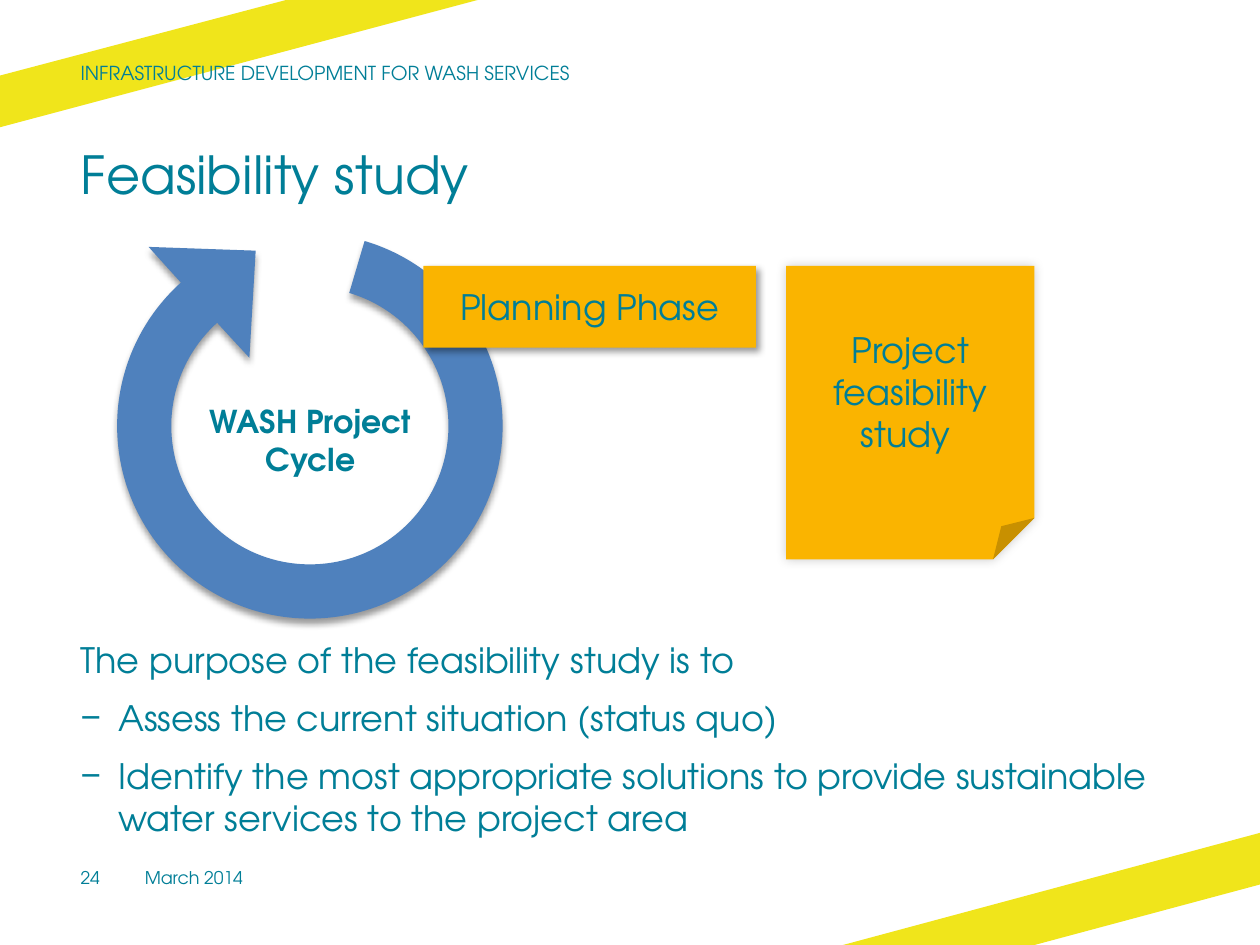
from math import cos, radians, sin, tan

from lxml.etree import SubElement
from pptx import Presentation
from pptx.dml.color import RGBColor
from pptx.enum.shapes import MSO_SHAPE as Shape
from pptx.enum.text import MSO_ANCHOR as Anchor, PP_ALIGN as Align
from pptx.oxml.ns import qn
from pptx.util import Inches, Pt

FONT, DASH_FONT = "TeX Gyre Adventor", "Arial"
TEAL, YELLOW, AMBER, BLUE = "007E97", "F0E51B", "FAB400", "4F81BD"
WIDTH, HEIGHT = 10, 7.5
MARGIN, CONTENT_WIDTH = 0.64, 8.73
CARD_TOP, FOOTER_TOP = 2.11, 6.88
CENTER_X, CENTER_Y = 2.46, 3.38


def color(hex_code):
    """Turn a hex string into a colour."""
    return RGBColor.from_string(hex_code)


def paint(shape, fill, shadow=None):
    """Fill a shape without outline; shadow is opacity, blur, distance, angle."""
    shape.fill.solid()
    shape.fill.fore_color.rgb = color(fill)
    shape.line.fill.background()
    shape.shadow.inherit = False
    if shadow:
        opacity, blur, distance, angle = shadow
        effects = shape._element.spPr.find(qn("a:effectLst"))
        outer = SubElement(effects, qn("a:outerShdw"), blurRad=str(Pt(blur)),
                           dist=str(Pt(distance)), dir=str(angle * 60000),
                           rotWithShape="0")
        black = SubElement(outer, qn("a:srgbClr"), val="000000")
        SubElement(black, qn("a:alpha"), val=str(opacity * 1000))


def add_run(paragraph, wording, size, bold=False):
    """Add one teal run to a paragraph."""
    run = paragraph.add_run()
    run.text = wording
    run.font.name = FONT
    run.font.size = Pt(size)
    run.font.bold = bold
    run.font.color.rgb = color(TEAL)


def add_text(slide, box, wording, size, anchor=Anchor.TOP):
    """Add a text box without insets and return its frame."""
    frame = slide.shapes.add_textbox(*map(Inches, box)).text_frame
    frame.word_wrap = True
    frame.vertical_anchor = anchor
    frame.margin_left = frame.margin_right = 0
    frame.margin_top = frame.margin_bottom = 0
    add_run(frame.paragraphs[0], wording, size)
    return frame


def add_dash_item(frame, wording, size):
    """Append a paragraph with a hanging dash."""
    item = frame.add_paragraph()
    item.level = 1
    add_run(item, wording, size)
    properties = item._p.get_or_add_pPr()
    properties.set("marL", str(Inches(0.3)))
    properties.set("indent", str(Inches(-0.3)))
    SubElement(properties, qn("a:buFont"), typeface=DASH_FONT)
    SubElement(properties, qn("a:buChar"), char="−")


def add_polygon(slide, points, fill, shadow=None):
    """Draw a closed outline through points given in inches."""
    start, *others = [(Inches(x), Inches(y)) for x, y in points]
    builder = slide.shapes.build_freeform(*start, scale=1.0)
    builder.add_line_segments(others, close=True)
    polygon = builder.convert_to_shape()
    paint(polygon, fill, shadow)
    return polygon


def add_card(slide, kind, box, wording, shadow):
    """Add an amber card with centred wording."""
    card = slide.shapes.add_shape(kind, *map(Inches, box))
    paint(card, AMBER, shadow)
    frame = card.text_frame
    frame.word_wrap = True
    frame.vertical_anchor = Anchor.MIDDLE
    frame.paragraphs[0].alignment = Align.CENTER
    add_run(frame.paragraphs[0], wording, 20)


def on_circle(radius, angle, shift=0):
    """Find a point on the cycle, moved along the tangent by a share of radius."""
    turn = radians(angle)
    return (CENTER_X + radius * (cos(turn) - shift * sin(turn)),
            CENTER_Y + radius * (sin(turn) + shift * cos(turn)))


def bend(shape, side, radius, start, end):
    """Turn a straight side of an outline into an arc of the cycle."""
    shift = 4 / 3 * tan(radians(end - start) / 4)
    side.clear()
    side.tag = qn("a:cubicBezTo")
    for x, y in (on_circle(radius, start, shift), on_circle(radius, end, -shift),
                 on_circle(radius, end)):
        SubElement(side, qn("a:pt"), x=str(Inches(x) - shape.left),
                   y=str(Inches(y) - shape.top))


def add_cycle(slide):
    """Draw the circular arrow."""
    outer, inner = 1.53, 1.1
    stops = [-73.5, 0, 90, 180, 228]
    back = stops[::-1]
    arrowhead = [(1.18, 1.96), (2.03, 1.99), (1.98, 2.84)]
    outline = ([on_circle(outer, stop) for stop in stops] + arrowhead
               + [on_circle(inner, stop) for stop in back])
    arrow = add_polygon(slide, outline, BLUE, (40, 4, 3, 90))
    sides = list(arrow._element.iter(qn("a:lnTo")))
    arcs = len(stops) - 1
    for radius, angles, curved in ((outer, stops, sides[:arcs]),
                                   (inner, back, sides[-arcs:])):
        for side, start, end in zip(curved, angles, angles[1:]):
            bend(arrow, side, radius, start, end)


def add_cycle_label(slide):
    """Write the name of the cycle inside the ring."""
    label = slide.shapes.add_textbox(*map(Inches, (1.52, 3.14, 1.89, 1.3)))
    label.text_frame.word_wrap = True
    name = label.text_frame.paragraphs[0]
    name.alignment = Align.CENTER
    add_run(name, "WASH Project Cycle", 18, bold=True)


def add_purpose(slide):
    """Write the purpose of the study with its two aims."""
    frame = add_text(slide, (MARGIN, 5.07, CONTENT_WIDTH, 1.62),
                     "The purpose of the feasibility study is to", 20)
    for aim in ("Assess the current situation (status quo)",
                "Identify the most appropriate solutions to provide "
                "sustainable water services to the project area"):
        add_dash_item(frame, aim, 20)
    for paragraph in frame.paragraphs:
        paragraph.space_before = Pt(0)
        paragraph.space_after = Pt(9)


def main():
    """Build and save the slide."""
    deck = Presentation()
    deck.slide_width, deck.slide_height = Inches(WIDTH), Inches(HEIGHT)
    slide = deck.slides.add_slide(deck.slide_layouts[6])

    add_polygon(slide, [(2.27, 0), (0, 0.6), (0, 1.01), (3.79, 0)], YELLOW)
    add_polygon(slide, [(6.69, HEIGHT), (8.21, HEIGHT), (WIDTH, 7.02),
                        (WIDTH, 6.61)], YELLOW)

    add_text(slide, (MARGIN, 1.13, CONTENT_WIDTH, 1.02), "Feasibility study", 30)
    add_purpose(slide)
    add_text(slide, (MARGIN, 0.43, 4.57, 0.29),
             "INFRASTRUCTURE DEVELOPMENT FOR WASH SERVICES", 11, Anchor.MIDDLE)
    add_text(slide, (MARGIN, FOOTER_TOP, 0.44, 0.24), "24", 10)

    add_cycle(slide)
    add_card(slide, Shape.RECTANGLE, (3.36, CARD_TOP, 2.64, 0.65),
             "Planning Phase", (40, 4, 3, 45))
    add_cycle_label(slide)
    add_card(slide, Shape.FOLDED_CORNER, (6.24, CARD_TOP, 1.97, 2.33),
             "Project feasibility study ", (20, 6, 0, 315))
    add_text(slide, (1.15, FOOTER_TOP, 2.2, 0.24), "March 2014", 10)

    deck.save("out.pptx")


if __name__ == "__main__":
    main()
